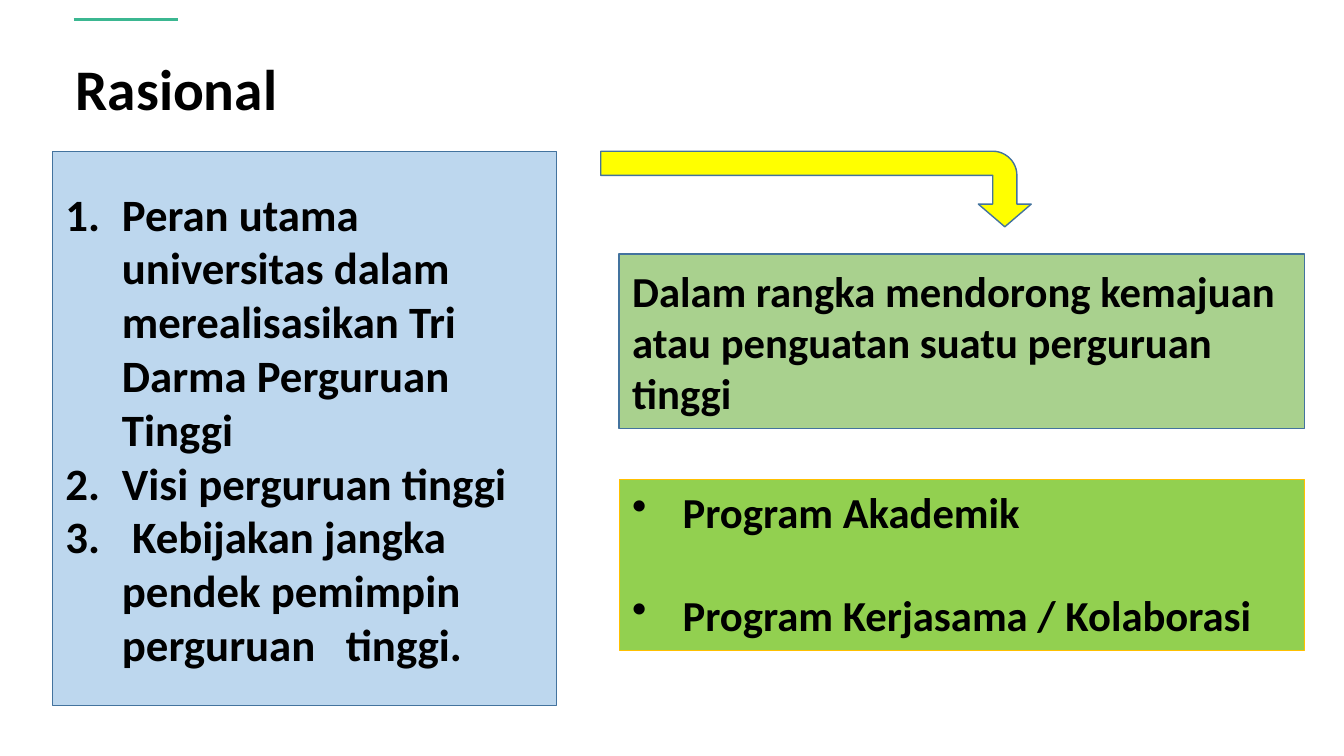
from dataclasses import dataclass

from lxml.etree import SubElement
from pptx import Presentation
from pptx.dml.color import RGBColor
from pptx.enum.shapes import MSO_CONNECTOR, MSO_SHAPE
from pptx.enum.text import MSO_ANCHOR, MSO_AUTO_SIZE, PP_ALIGN
from pptx.oxml.ns import qn
from pptx.util import Inches, Pt


@dataclass(frozen=True)
class Theme:
    font: str = "Calibri"
    ink: str = "000000"
    accent: str = "3BB791"
    outline: str = "43739E"
    gold: str = "FFC000"
    blue: str = "BDD7EE"
    sage: str = "A9D18E"
    green: str = "92D050"
    yellow: str = "FFFF00"
    title: float = 41
    large: float = 32
    body: float = 30.5


T = Theme()
W, H = Inches(13.33), Inches(7.5)

# Columns and rows, as percentages of the slide
LEFT, LEFT_W = 3.9, 37.5
RIGHT, RIGHT_W = 46.06, 51.01
TOP = 20


def rgb(value):
    return RGBColor.from_string(value)


def box(x, y, w, h):
    """Turn percentages of the slide into lengths."""
    return int(W * x / 100), int(H * y / 100), int(W * w / 100), int(H * h / 100)


def set_frame(tf, anchor=MSO_ANCHOR.TOP, grow=False):
    tf.word_wrap = True
    tf.auto_size = MSO_AUTO_SIZE.SHAPE_TO_FIT_TEXT if grow else MSO_AUTO_SIZE.NONE
    tf.vertical_anchor = anchor
    tf.margin_left = tf.margin_right = Inches(0.13)
    tf.margin_top = tf.margin_bottom = Inches(0.06)


def set_bullet(p, tag, indent, **attrs):
    pPr = p._p.get_or_add_pPr()
    pPr.set("marL", str(Inches(indent)))
    pPr.set("indent", str(-Inches(indent)))
    SubElement(pPr, qn(f"a:{tag}"), attrs)


def write(tf, lines, size, gap=0, indent=0, tag=None, **attrs):
    """Write bold paragraphs, with optional bullets and gaps between them."""
    for i, text in enumerate(lines):
        p = tf.add_paragraph() if i else tf.paragraphs[0]
        p.alignment = PP_ALIGN.LEFT
        p.space_before = Pt(gap if i else 0)
        if tag:
            set_bullet(p, tag, indent, **attrs)
        r = p.add_run()
        r.text = text
        r.font.name, r.font.size, r.font.bold = T.font, Pt(size), True
        r.font.color.rgb = rgb(T.ink)


def add_filled(s, kind, place, fill, line=T.outline, width=1):
    sp = s.shapes.add_shape(kind, *place)
    sp.shadow.inherit = False
    sp.fill.solid()
    sp.fill.fore_color.rgb = rgb(fill)
    sp.line.color.rgb = rgb(line)
    sp.line.width = Pt(width)
    return sp


def add_panel(s, place, lines, fill, size, anchor=MSO_ANCHOR.MIDDLE,
              grow=False, line=T.outline, width=1, **text_format):
    sp = add_filled(s, MSO_SHAPE.RECTANGLE, place, fill, line, width)
    set_frame(sp.text_frame, anchor, grow)
    write(sp.text_frame, lines, size, **text_format)


def add_turning_arrow(s, place, fill, adjustments):
    """Place a bent arrow turned a quarter so that it fills the given area."""
    x, y, w, h = place
    shift = (w - h) // 2
    sp = add_filled(s, MSO_SHAPE.BENT_ARROW, (x + shift, y - shift, h, w), fill)
    sp.rotation = 90
    for i, value in enumerate(adjustments):
        sp.adjustments[i] = value


def add_rule(s, x, y, w):
    left, top, width, _ = box(x, y, w, 0)
    ln = s.shapes.add_connector(MSO_CONNECTOR.STRAIGHT, left, top, left + width, top)
    ln.line.color.rgb = rgb(T.accent)
    ln.line.width = Pt(2.25)
    SubElement(ln._element.spPr, qn("a:effectLst"))


def add_title(s, text, place):
    sp = s.shapes.title
    sp.left, sp.top, sp.width, sp.height = place
    set_frame(sp.text_frame, grow=True)
    write(sp.text_frame, [text], T.title)


def main():
    prs = Presentation()
    prs.slide_width, prs.slide_height = W, H
    s = prs.slides.add_slide(prs.slide_layouts[5])

    # Heading
    add_title(s, "Rasional", box(4.65, 6.27, 42.69, 10.93))
    add_rule(s, 5.48, 2.53, 7.8)

    # Programmes
    add_panel(s, box(RIGHT, 63.47, RIGHT_W, 22.53),
              ["Program Akademik", "Program Kerjasama / Kolaborasi"],
              T.green, T.body, anchor=MSO_ANCHOR.TOP, grow=True, line=T.gold,
              width=0.5, gap=37, indent=0.5, tag="buChar", char="•")

    # Reasons
    add_panel(s, box(LEFT, TOP, LEFT_W, 73.33),
              ["Peran utama universitas dalam merealisasikan Tri Darma Perguruan Tinggi",
               "Visi perguruan tinggi",
               " Kebijakan jangka pendek pemimpin perguruan   tinggi."],
              T.blue, T.large, indent=0.56, tag="buAutoNum", type="arabicPeriod")

    # Arrow to the purpose
    add_turning_arrow(s, box(44.7, TOP, 32.03, 10), T.yellow, (0.32, 0.35, 0.3, 0.32))
    add_panel(s, box(RIGHT, 33.6, RIGHT_W, 23.07),
              ["Dalam rangka mendorong kemajuan atau penguatan suatu perguruan tinggi"],
              T.sage, T.body)

    prs.save("out.pptx")


if __name__ == "__main__":
    main()
